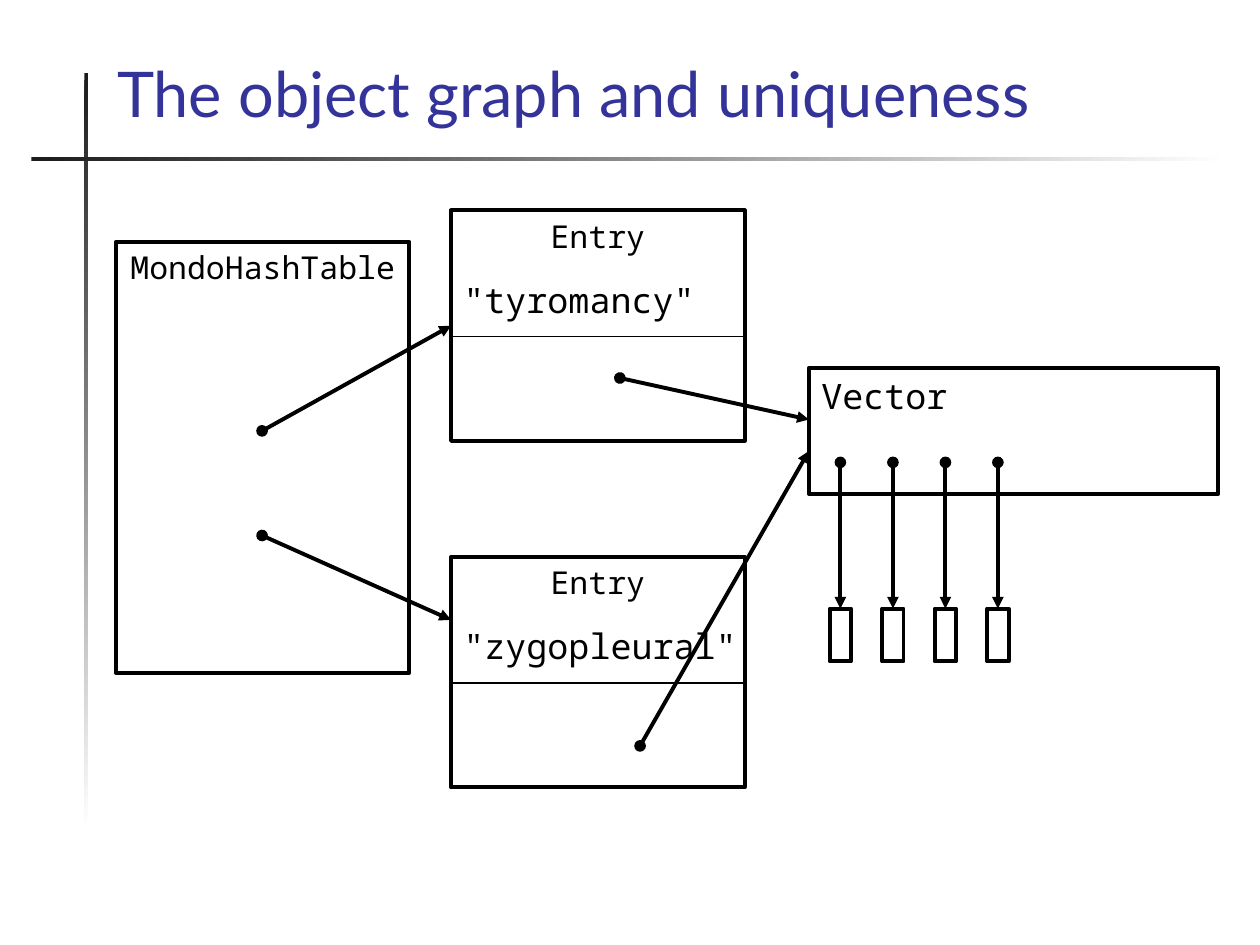
from dataclasses import dataclass

from lxml.etree import SubElement
from pptx import Presentation
from pptx.dml.color import RGBColor
from pptx.enum.shapes import MSO_CONNECTOR, MSO_SHAPE
from pptx.enum.text import MSO_ANCHOR, PP_ALIGN
from pptx.oxml.ns import qn
from pptx.util import Inches, Pt


@dataclass(frozen=True)
class Theme:
    ink: RGBColor = RGBColor(0x00, 0x00, 0x00)
    title: RGBColor = RGBColor(0x33, 0x33, 0x99)
    rule_start: RGBColor = RGBColor(0x1C, 0x1C, 0x1C)
    rule_end: RGBColor = RGBColor(0xFF, 0xFF, 0xFF)
    title_font: str = "Lato"
    code_font: str = "Noto Sans Mono"
    title_size: float = 36
    name_size: float = 18
    value_size: float = 20
    thick: float = 2.25
    thin: float = 0.75


class GraphPage:
    def __init__(self, deck, theme):
        self.theme = theme
        self.page = deck.slides.add_slide(deck.slide_layouts[5])
        self.shapes = self.page.shapes

    def set_text(self, shape, text, font, size, color, align, anchor, wrap):
        frame = shape.text_frame
        for name, value in {"word_wrap": wrap, "vertical_anchor": anchor}.items():
            setattr(frame, name, value)
        para = frame.paragraphs[0]
        para.alignment = align
        span = para.add_run()
        span.text = text
        formats = {"name": font, "size": Pt(size), "bold": False}
        for name, value in formats.items():
            setattr(span.font, name, value)
        span.font.color.rgb = color

    def code(self, shape, text, size, align=PP_ALIGN.LEFT, wrap=False):
        self.set_text(shape, text, self.theme.code_font, size, self.theme.ink,
                      align, MSO_ANCHOR.TOP, wrap)

    def title(self, text, left, top, width, height):
        holder = self.shapes.title
        bounds = {"left": left, "top": top, "width": width, "height": height}
        for name, value in bounds.items():
            setattr(holder, name, Inches(value))
        self.set_text(holder, text, self.theme.title_font, self.theme.title_size,
                      self.theme.title, PP_ALIGN.LEFT, MSO_ANCHOR.BOTTOM, True)

    def rectangle(self, left, top, width, height):
        box = self.shapes.add_shape(
            MSO_SHAPE.RECTANGLE, *map(Inches, (left, top, width, height)))
        box.shadow.inherit = False
        return box

    def rule(self, left, top, width, height, angle):
        """Add a fading bar; the angle runs counter-clockwise."""
        bar = self.rectangle(left, top, width, height)
        bar.line.fill.background()
        bar.fill.gradient()
        bar.fill.gradient_angle = angle
        colors = (self.theme.rule_start, self.theme.rule_end)
        for stop, color in zip(bar.fill.gradient_stops, colors):
            stop.color.rgb = color

    def node(self, left, top, width, height, name="", size=None,
             align=PP_ALIGN.CENTER):
        box = self.rectangle(left, top, width, height)
        box.fill.background()
        box.line.color.rgb = self.theme.ink
        box.line.width = Pt(self.theme.thick)
        if name:
            self.code(box, name, size or self.theme.name_size, align)
        return box

    def label(self, text, left, top, width, height):
        box = self.shapes.add_textbox(*map(Inches, (left, top, width, height)))
        self.code(box, text, self.theme.value_size, wrap=True)

    def line(self, start, end, width):
        connector = self.shapes.add_connector(
            MSO_CONNECTOR.STRAIGHT, *map(Inches, (*start, *end)))
        connector.line.color.rgb = self.theme.ink
        connector.line.width = Pt(width)
        SubElement(connector.element.spPr, qn("a:effectLst"))
        return connector

    def reference(self, start, end, target=None, side=0):
        """Add an arrow from a dot, joined to a side of target if given."""
        arrow = self.line(start, end, self.theme.thick)
        outline = arrow.element.spPr.find(qn("a:ln"))
        for tag, kind in (("a:headEnd", "oval"), ("a:tailEnd", "triangle")):
            SubElement(outline, qn(tag), type=kind)
        if target is not None:
            arrow.end_connect(target, side)

    def entry(self, top, word, word_width):
        """Add an Entry node with its key above a divider."""
        left, width = 3.58, 2.33
        box = self.node(left, top, width, 1.83, "Entry")
        self.line((left, top + 1), (left + width, top + 1), self.theme.thin)
        self.label(word, left, top + 0.49, word_width, 0.43)
        return box


def main():
    deck = Presentation()
    deck.slide_width, deck.slide_height = Inches(10), Inches(7.5)
    graph = GraphPage(deck, Theme())

    graph.rule(0.67, 0.58, 0.03, 6, 270)
    graph.rule(0.25, 1.25, 9.5, 0.03, 0)
    graph.title("The object graph and uniqueness", 0.83, 0, 9, 1.08)

    graph.node(0.92, 1.92, 2.33, 3.42, "MondoHashTable")
    graph.entry(4.42, '"zygopleural"', 2.5)
    first_entry = graph.entry(1.67, '"tyromancy"', 2.33)
    graph.node(6.42, 2.92, 3.25, 1, "Vector", graph.theme.value_size,
               PP_ALIGN.LEFT)

    graph.reference((2.08, 3.42), (3.58, 2.58), first_entry, 1)
    graph.reference((2.08, 4.25), (3.58, 4.92))
    graph.reference((4.92, 3), (6.42, 3.33))
    graph.reference((5.08, 5.92), (6.42, 3.58))

    element_width, pitch, element_top = 0.17, 5 / 12, 4.83
    for index in range(4):
        center = 6.67 + index * pitch
        element = graph.node(center - element_width / 2, element_top,
                             element_width, 0.42)
        graph.reference((center, 3.67), (center, element_top), element)

    deck.save("out.pptx")


if __name__ == "__main__":
    main()
